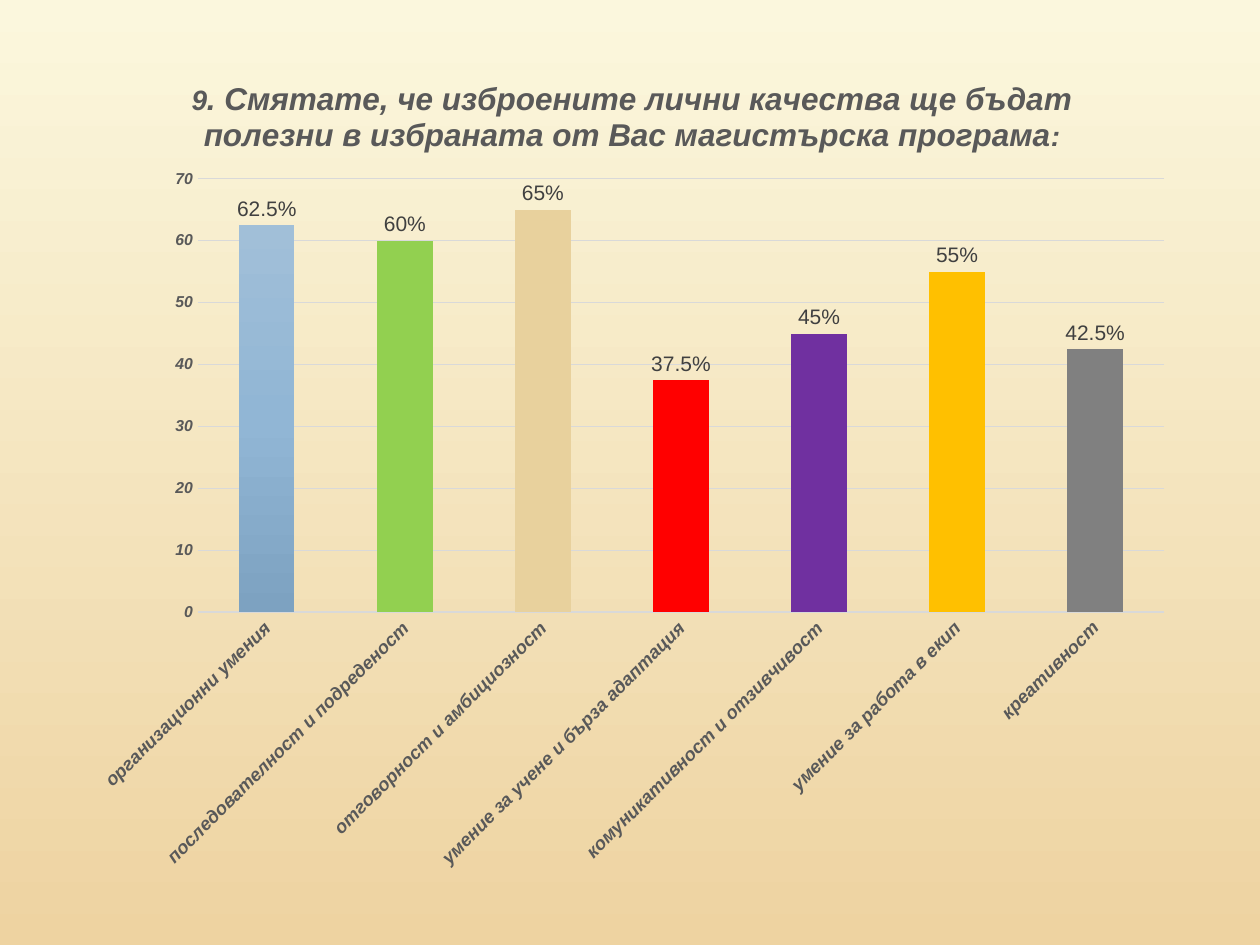
from copy import deepcopy

from lxml.etree import SubElement
from pptx import Presentation
from pptx.chart.data import CategoryChartData
from pptx.dml.color import RGBColor
from pptx.enum.chart import XL_CHART_TYPE, XL_LABEL_POSITION, XL_TICK_MARK
from pptx.oxml.ns import qn
from pptx.util import Inches, Pt

GREY = RGBColor(0x59, 0x59, 0x59)
DARK = RGBColor(0x40, 0x40, 0x40)
PALE = RGBColor(0xD9, 0xD9, 0xD9)
CREAM = RGBColor(0xFB, 0xF7, 0xDD)
SAND = RGBColor(0xEE, 0xD3, 0xA1)
BLUES = [
    RGBColor(0xA1, 0xBF, 0xD8),
    RGBColor(0x91, 0xB6, 0xD5),
    RGBColor(0x7D, 0xA2, 0xC1),
]
BARS = [
    RGBColor(0x92, 0xD0, 0x50),
    RGBColor(0xE8, 0xD1, 0x9D),
    RGBColor(0xFF, 0x00, 0x00),
    RGBColor(0x70, 0x30, 0xA0),
    RGBColor(0xFF, 0xC0, 0x00),
    RGBColor(0x80, 0x80, 0x80),
]
SCORES = {
    " организационни умения": 62.5,
    " последователност и подреденост": 60,
    " отговорност и амбициозност": 65,
    " умение за учене и бърза адаптация": 37.5,
    " комуникативност и отзивчивост": 45,
    " умение за работа в екип": 55,
    "креативност": 42.5,
}
TITLE = [
    ("9", 16),
    (". Смятате, че изброените лични качества ще бъдат "
     "полезни в избраната от Вас магистърска програма", 18),
    (":", 16),
]


class Deck:
    face = "Arial"

    def __init__(self):
        self.prs = Presentation()
        self.prs.slide_width = Inches(10)
        self.prs.slide_height = Inches(7.5)
        self.slide = self.prs.slides.add_slide(self.prs.slide_layouts[6])

    def style(self, font, size, color=GREY, bold=True):
        font.name = self.face
        font.size = Pt(size)
        font.bold = font.italic = bold
        font.color.rgb = color

    def blend(self, fill, first, last):
        fill.gradient()
        fill.gradient_angle = 270
        for stop, color, place in zip(fill.gradient_stops, (first, last), (0, 1)):
            stop.color.rgb = color
            stop.position = place

    def back(self):
        self.blend(self.slide.background.fill, CREAM, SAND)

    def place(self, layout, **spots):
        for old in list(layout):
            layout.remove(old)
        manual = SubElement(layout, qn("c:manualLayout"))
        for name, val in spots.items():
            SubElement(manual, qn("c:" + name)).set("val", str(val))

    def chart(self, left, top, width, height):
        data = CategoryChartData()
        data.categories = list(SCORES)
        data.add_series("Series 1", list(SCORES.values()))
        frame = self.slide.shapes.add_chart(
            XL_CHART_TYPE.COLUMN_CLUSTERED,
            Inches(left), Inches(top), Inches(width), Inches(height), data)
        chart = frame.chart
        chart.has_legend = False
        self.style(chart.font, 10, GREY)
        self.title(chart, 0.9 / width, 0.24 / height)
        self.axes(chart)
        self.bars(chart.plots[0])
        area = chart.plots[0]._element.getparent()
        layout = area.find(qn("c:layout"))
        if layout is None:
            layout = SubElement(area, qn("c:layout"))
            area.insert(0, layout)
        self.place(layout, layoutTarget="inner", xMode="edge", yMode="edge",
                   x=0.98 / width, y=1.06 / height,
                   w=7.67 / width, h=3.44 / height)

    def title(self, chart, across, down):
        para = chart.chart_title.text_frame.paragraphs[0]
        for text, size in TITLE:
            run = para.add_run()
            run.text = text
            self.style(run.font, size)
        chart.chart_title.include_in_layout = False
        head = chart.chart_title._element
        layout = head.find(qn("c:layout"))
        if layout is None:
            layout = SubElement(head, qn("c:layout"))
            head.find(qn("c:tx")).addnext(layout)
        self.place(layout, xMode="edge", yMode="edge", x=across, y=down)

    def axes(self, chart):
        cat, val = chart.category_axis, chart.value_axis
        for axis, size in ((cat, 10.5), (val, 9)):
            axis.major_tick_mark = axis.minor_tick_mark = XL_TICK_MARK.NONE
            self.style(axis.tick_labels.font, size)
        cat.format.line.color.rgb = PALE
        cat.format.line.width = Pt(1)
        body = cat._element.find(qn("c:txPr")).find(qn("a:bodyPr"))
        body.set("rot", "-2700000")
        body.set("vert", "horz")
        val.minimum_scale, val.maximum_scale, val.major_unit = 0, 70, 10
        val.format.line.fill.background()
        val.has_major_gridlines = True
        grid = val.major_gridlines.format.line
        grid.color.rgb = PALE
        grid.width = Pt(0.75)

    def bars(self, plot):
        plot.gap_width = 150
        plot.vary_by_categories = False
        row = plot.series[0]
        row.invert_if_negative = False
        self.blend(row.format.fill, BLUES[0], BLUES[2])
        first = next(row._element.iter(qn("a:gs")))
        mid = deepcopy(first)
        mid.set("pos", "50000")
        mid.find(qn("a:srgbClr")).set("val", str(BLUES[1]))
        first.addnext(mid)
        for spot, color in enumerate(BARS, 1):
            fill = row.points[spot].format.fill
            fill.solid()
            fill.fore_color.rgb = color
        tags = row.data_labels
        tags.show_value = True
        tags.number_format = 'General"%"'
        tags.number_format_is_linked = False
        tags.position = XL_LABEL_POSITION.OUTSIDE_END
        self.style(tags.font, 12, DARK, False)


def main():
    deck = Deck()
    deck.back()
    deck.chart(0.59, 0.36, 8.82, 6.69)
    deck.prs.save("out.pptx")


if __name__ == "__main__":
    main()
